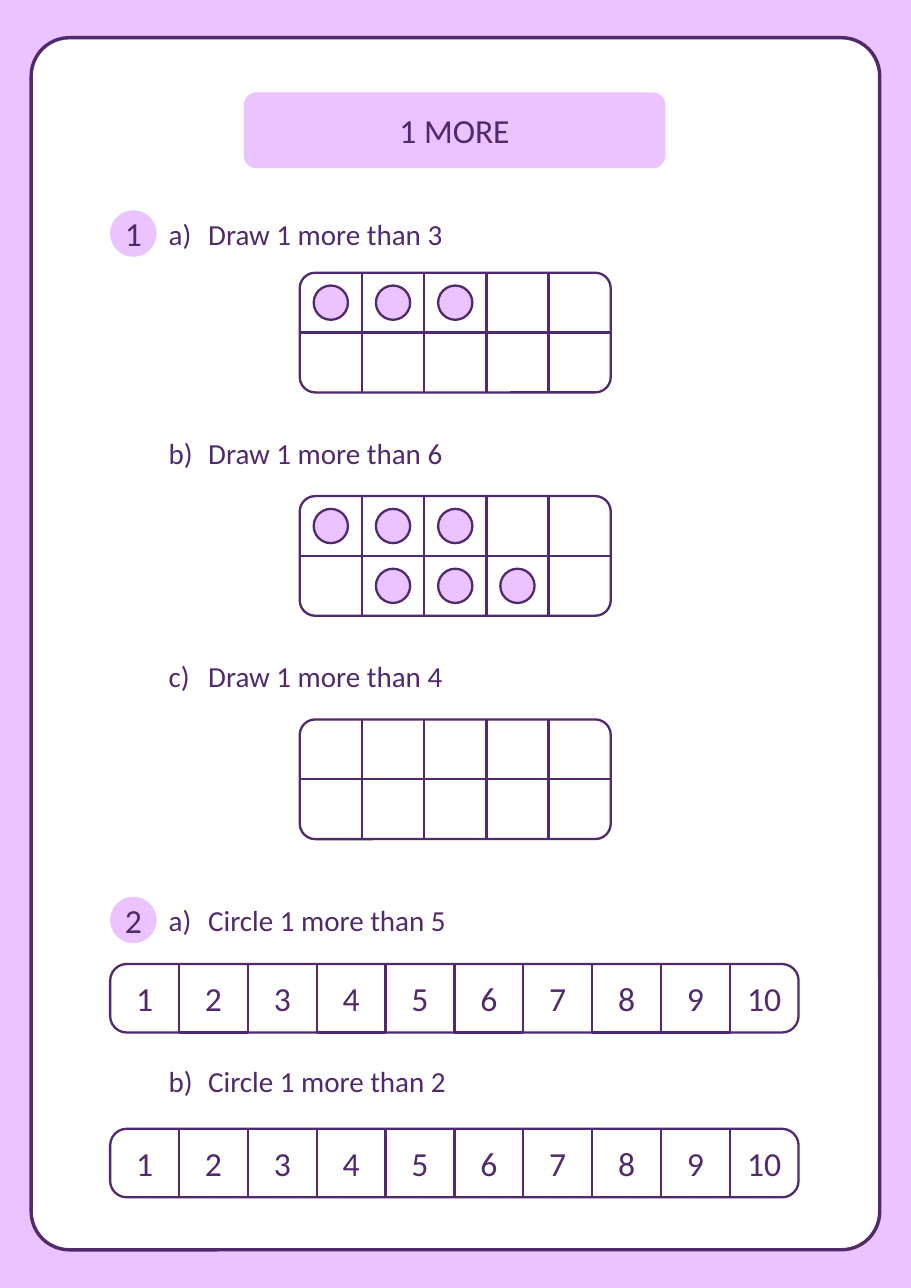
"""Build a one-page "1 more" counting worksheet with ten frames and number strips."""
from lxml import etree
from pptx import Presentation
from pptx.dml.color import RGBColor
from pptx.enum.shapes import MSO_CONNECTOR, MSO_SHAPE
from pptx.enum.text import MSO_ANCHOR, MSO_AUTO_SIZE, PP_ALIGN
from pptx.oxml.ns import qn
from pptx.util import Cm, Pt

RECTANGLE, ROUNDED, OVAL = MSO_SHAPE.RECTANGLE, MSO_SHAPE.ROUNDED_RECTANGLE, MSO_SHAPE.OVAL
STRAIGHT = MSO_CONNECTOR.STRAIGHT
LEFT, CENTER = PP_ALIGN.LEFT, PP_ALIGN.CENTER
TOP, MIDDLE = MSO_ANCHOR.TOP, MSO_ANCHOR.MIDDLE
FIT_SHAPE = MSO_AUTO_SIZE.SHAPE_TO_FIT_TEXT

TITLE = "1 MORE"
BADGES = [("1", 4.85), ("2", 20.68)]
FRAME_TASKS = [
    {"letter": "a)", "prompt": "Draw 1 more than 3", "prompt_top": 5.0, "frame_top": 6.29,
     "counters": [(0, 0), (0, 1), (0, 2)]},
    {"letter": "b)", "prompt": "Draw 1 more than 6", "prompt_top": 10.04, "frame_top": 11.44,
     "counters": [(0, 0), (0, 1), (0, 2), (1, 1), (1, 2), (1, 3)]},
    {"letter": "c)", "prompt": "Draw 1 more than 4", "prompt_top": 15.18, "frame_top": 16.59,
     "counters": []},
]
STRIP_TASKS = [
    {"letter": "a)", "prompt": "Circle 1 more than 5", "prompt_top": 20.81, "strip_top": 22.23},
    {"letter": "b)", "prompt": "Circle 1 more than 2", "prompt_top": 24.52, "strip_top": 26.03},
]
STRIP_NUMBERS = range(1, 11)
OUTLINED_NUMBERS = {2, 4, 6, 8, 9}

THEME = {
    "lilac": RGBColor.from_string("EBC3FF"),
    "purple": RGBColor.from_string("51296D"),
    "white": RGBColor.from_string("FFFFFF"),
    "font": "Calibri",
    "large": Pt(22),
    "body": Pt(19),
    "line": Pt(1.5),
    "border": Pt(2.25),
}

PAGE_WIDTH, PAGE_HEIGHT = 21.0, 29.7
BADGE_LEFT, BADGE_SIZE = 2.54, 1.07
LETTER_LEFT, LETTER_WIDTH, PROMPT_WIDTH, PROMPT_HEIGHT = 3.89, 0.91, 10.34, 0.81
FRAME_LEFT, FRAME_WIDTH, FRAME_HEIGHT = 6.91, 7.17, 2.76
FRAME_COLUMNS, FRAME_ROWS, COUNTER_SIZE = 5, 2, 0.79
STRIP_LEFT, STRIP_WIDTH, STRIP_HEIGHT = 2.54, 15.87, 1.58


def write_text(shape, text, size, alignment=CENTER, anchor=MIDDLE, inset=0):
    frame = shape.text_frame
    frame.word_wrap = True
    frame.vertical_anchor = anchor
    frame.margin_left = frame.margin_right = Cm(inset)
    frame.margin_top = frame.margin_bottom = Cm(inset)
    paragraph = frame.paragraphs[0]
    paragraph.alignment = alignment
    run = paragraph.add_run()
    run.text = text
    run.font.name = THEME["font"]
    run.font.size = size
    run.font.color.rgb = THEME["purple"]


def add_box(shapes, kind, box, fill=None, line=None, corner=None):
    shape = shapes.add_shape(kind, *map(Cm, box))
    shape.shadow.inherit = False
    if fill is None:
        shape.fill.background()
    else:
        shape.fill.solid()
        shape.fill.fore_color.rgb = fill
    if line is None:
        shape.line.fill.background()
    else:
        shape.line.color.rgb = THEME["purple"]
        shape.line.width = line
    if corner is not None:
        shape.adjustments[0] = corner
    return shape


def add_line(shapes, x1, y1, x2, y2):
    connector = shapes.add_connector(STRAIGHT, *map(Cm, (x1, y1, x2, y2)))
    connector.line.color.rgb = THEME["purple"]
    connector.line.width = THEME["line"]
    properties = connector._element.find(qn("p:spPr"))
    etree.SubElement(properties, qn("a:effectLst"))
    return connector


def add_prompt(slide, task):
    shapes = slide.shapes.add_group_shape().shapes
    parts = [(task["letter"], LETTER_LEFT, LETTER_WIDTH),
             (task["prompt"], LETTER_LEFT + LETTER_WIDTH, PROMPT_WIDTH)]
    for text, left, width in parts:
        shape = shapes.add_textbox(*map(Cm, (left, task["prompt_top"], width, PROMPT_HEIGHT)))
        write_text(shape, text, THEME["body"], LEFT, TOP)
        shape.text_frame.auto_size = FIT_SHAPE


def add_ten_frame(slide, top, counters):
    shapes = slide.shapes.add_group_shape().shapes
    cell_width, cell_height = FRAME_WIDTH / FRAME_COLUMNS, FRAME_HEIGHT / FRAME_ROWS
    outline = add_box(shapes, ROUNDED, (FRAME_LEFT, top, FRAME_WIDTH, FRAME_HEIGHT),
                      line=THEME["line"], corner=0.129)
    middle = top + cell_height
    divider = add_line(shapes, FRAME_LEFT, middle, FRAME_LEFT + FRAME_WIDTH, middle)
    divider.begin_connect(outline, 1)
    divider.end_connect(outline, 3)
    for column in range(1, FRAME_COLUMNS):
        x = FRAME_LEFT + column * cell_width
        add_line(shapes, x, top, x, top + FRAME_HEIGHT)
    for row, column in counters:
        left = FRAME_LEFT + (column + 0.5) * cell_width - COUNTER_SIZE / 2
        counter_top = top + (row + 0.5) * cell_height - COUNTER_SIZE / 2
        add_box(slide.shapes, OVAL, (left, counter_top, COUNTER_SIZE, COUNTER_SIZE),
                THEME["lilac"], THEME["line"])


def add_number_strip(slide, top):
    shapes = slide.shapes.add_group_shape().shapes
    add_box(shapes, ROUNDED, (STRIP_LEFT, top, STRIP_WIDTH, STRIP_HEIGHT),
            line=THEME["line"], corner=0.243)
    cell_width = STRIP_WIDTH / len(STRIP_NUMBERS)
    for index, number in enumerate(STRIP_NUMBERS):
        box = (STRIP_LEFT + index * cell_width, top, cell_width, STRIP_HEIGHT)
        if number in OUTLINED_NUMBERS:
            cell = add_box(shapes, RECTANGLE, box, line=THEME["line"])
        else:
            cell = shapes.add_textbox(*map(Cm, box))
        write_text(cell, str(number), THEME["large"], inset=0.25)


def main():
    presentation = Presentation()
    presentation.slide_width, presentation.slide_height = Cm(PAGE_WIDTH), Cm(PAGE_HEIGHT)
    slide = presentation.slides.add_slide(presentation.slide_layouts[6])

    add_box(slide.shapes, RECTANGLE, (0, 0, PAGE_WIDTH, PAGE_HEIGHT), THEME["lilac"])
    add_box(slide.shapes, ROUNDED, (0.72, 0.87, 19.56, 27.95),
            THEME["white"], THEME["border"], 0.045)
    title = add_box(slide.shapes, ROUNDED, (5.62, 2.13, 9.72, 1.75),
                    THEME["lilac"], corner=0.167)
    write_text(title, TITLE, THEME["large"], inset=0.25)

    for number, top in BADGES:
        badge = add_box(slide.shapes, OVAL, (BADGE_LEFT, top, BADGE_SIZE, BADGE_SIZE),
                        THEME["lilac"])
        write_text(badge, number, THEME["large"])
    for task in FRAME_TASKS:
        add_prompt(slide, task)
        add_ten_frame(slide, task["frame_top"], task["counters"])
    for task in STRIP_TASKS:
        add_prompt(slide, task)
        add_number_strip(slide, task["strip_top"])

    presentation.save("out.pptx")


if __name__ == "__main__":
    main()
